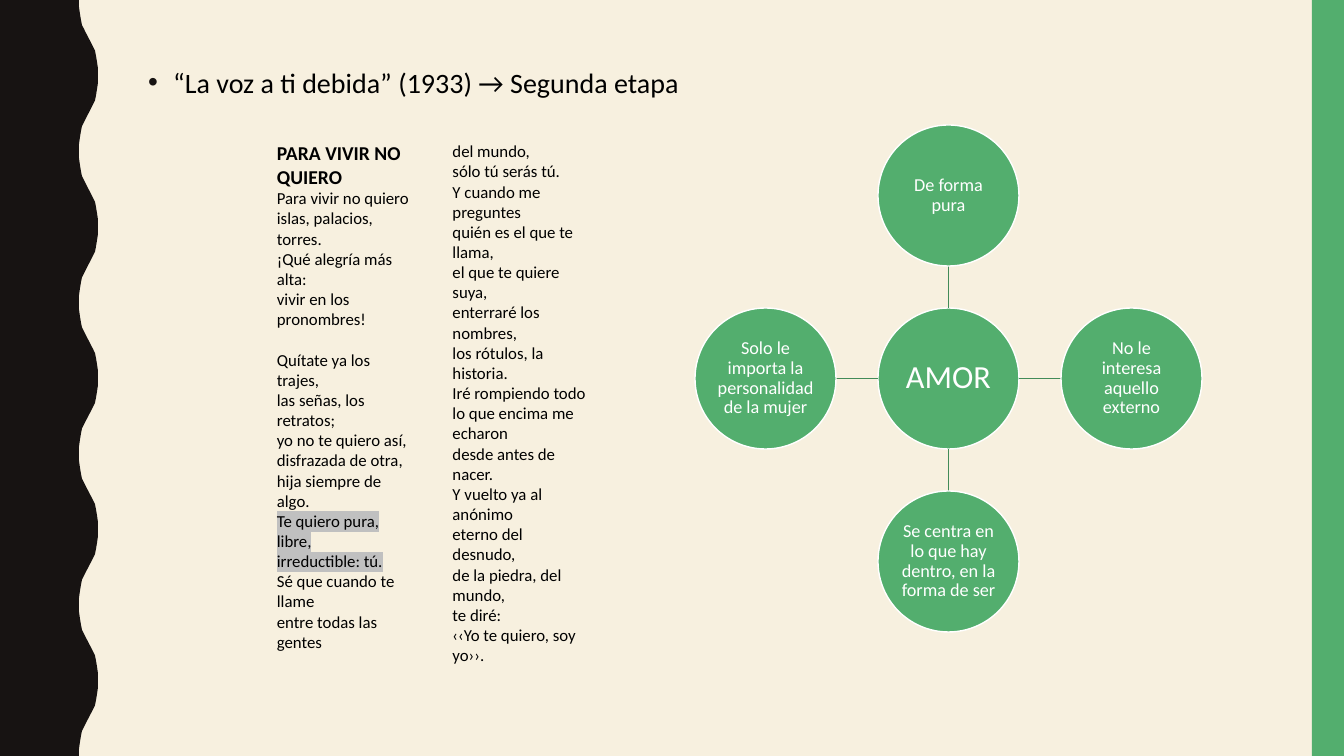
from pptx import Presentation
from pptx import util as u
from pptx.dml import color
from pptx.enum import shapes, text
from pptx.oxml import ns
from lxml import etree

SCALE = 914400 / 100.8  # EMU per px
WIDTH, HEIGHT = 1344, 756
FONT = "Calibri"
CREAM, INK, GREEN, DARK_GREEN = "F7F0DF", "171312", "53AE6E", "428B58"
BLACK, WHITE, GREY = "000000", "FFFFFF", "C0C0C0"

POEM_TITLE = "PARA VIVIR NO QUIERO"
STANZAS = [
    ["Para vivir no quiero", "islas, palacios, torres.", "¡Qué alegría más alta:",
     "vivir en los pronombres!"],
    ["Quítate ya los trajes,", "las señas, los retratos;", "yo no te quiero así,",
     "disfrazada de otra,", "hija siempre de algo.", "Te quiero pura, libre,",
     "irreductible: tú.", "Sé que cuando te llame", "entre todas las gentes",
     "del mundo,", "sólo tú serás tú.", "Y cuando me preguntes",
     "quién es el que te llama,", "el que te quiere suya,", "enterraré los nombres,",
     "los rótulos, la historia.", "Iré rompiendo todo", "lo que encima me echaron",
     "desde antes de nacer.", "Y vuelto ya al anónimo", "eterno del desnudo,",
     "de la piedra, del mundo,", "te diré:", "‹‹Yo te quiero, soy yo››."],
]
HIGHLIGHTED = {"Te quiero pura, libre,", "irreductible: tú."}

# Direction from the hub and wording of each outer circle
IDEAS = [
    (0, -1, "De forma pura"),
    (1, 0, "No le interesa aquello externo"),
    (0, 1, "Se centra en lo que hay dentro, en la forma de ser"),
    (-1, 0, "Solo le importa la personalidad de la mujer"),
]


def px(length):
    return u.Emu(round(length * SCALE))


def rgb(value):
    return color.RGBColor.from_string(value)


def add_child(parent, tag, **attributes):
    return etree.SubElement(parent, ns.qn(tag), attributes)


def paint(shape, fill, line=None):
    shape.shadow.inherit = False
    shape.fill.solid()
    shape.fill.fore_color.rgb = rgb(fill)
    if line:
        shape.line.color.rgb = rgb(line)
        shape.line.width = u.Pt(1)
    else:
        shape.line.fill.background()


def add_run(paragraph, words, size, ink, bold=False, highlight=None):
    run = paragraph.add_run()
    run.text = words
    run.font.size = u.Pt(size)
    run.font.bold = bold
    run.font.name = FONT
    run.font.color.rgb = rgb(ink)
    if highlight:
        properties = run.font.fill and run._r.get_or_add_rPr()
        mark = add_child(properties, "a:highlight")
        add_child(mark, "a:srgbClr", val=highlight)
        properties.find(ns.qn("a:solidFill")).addnext(mark)


def add_wave(slide, left, top, base, depth, height, periods):
    """Dark band whose right edge swings between base and base + depth."""
    half = height / periods / 2
    quarter = [(0, 0), (0, 7), (1, 14), (2, 20), (3, 25), (5, 29), (7, 33)]
    swing = quarter + [(depth - x, half - y) for x, y in reversed(quarter)]
    edge = []
    for index in range(2 * periods):
        for x, y in swing:
            offset = depth - x if index % 2 else x
            edge.append((px(left + base + offset), px(top + index * half + y)))
    builder = slide.shapes.build_freeform(px(left), px(top), scale=1.0)
    builder.add_line_segments(edge + [(px(left), px(top + height))], close=True)
    paint(builder.convert_to_shape(), INK)


def add_side_bar(slide, left, top, width, height):
    bar = slide.shapes.add_shape(
        shapes.MSO_SHAPE.RECTANGLE, px(left), px(top), px(width), px(height))
    paint(bar, GREEN)


def add_heading(slide, left, top, width, height):
    body = slide.placeholders[1]
    body.left, body.top, body.width, body.height = map(px, (left, top, width, height))
    body.text_frame.auto_size = text.MSO_AUTO_SIZE.NONE
    paragraph = body.text_frame.paragraphs[0]
    paragraph.line_spacing = 1.1
    paragraph.space_before = u.Pt(7)
    add_run(paragraph, "“La voz a ti debida” (1933) → Segunda etapa", 20, BLACK)
    # Bullet
    properties = paragraph._p.get_or_add_pPr()
    properties.set("marL", str(px(25)))
    properties.set("indent", str(px(-25)))
    add_child(add_child(properties, "a:buClr"), "a:srgbClr", val=INK)
    add_child(properties, "a:buFont", typeface="Arial")
    add_child(properties, "a:buChar", char="•")


def add_poem(slide, left, top, width, height, gap):
    box = slide.shapes.add_textbox(px(left), px(top), px(width), px(height))
    frame = box.text_frame
    frame.word_wrap = True
    frame.auto_size = text.MSO_AUTO_SIZE.SHAPE_TO_FIT_TEXT
    columns = frame._txBody.bodyPr
    columns.set("numCol", "2")
    columns.set("spcCol", str(px(gap)))
    add_run(frame.paragraphs[0], POEM_TITLE, 14, BLACK, bold=True)
    for number, stanza in enumerate(STANZAS):
        for verse in stanza:
            paragraph = frame.add_paragraph()
            if number and verse == stanza[0]:
                paragraph.space_before = u.Pt(14.4)
            add_run(paragraph, verse, 12, BLACK,
                    highlight=GREY if verse in HIGHLIGHTED else None)


def add_circle(slide, x, y, diameter, words, size):
    """Circle centred on x, y."""
    circle = slide.shapes.add_shape(
        shapes.MSO_SHAPE.OVAL, px(x - diameter / 2), px(y - diameter / 2),
        px(diameter), px(diameter))
    paint(circle, GREEN, WHITE)
    frame = circle.text_frame
    frame.word_wrap = True
    frame.vertical_anchor = text.MSO_ANCHOR.MIDDLE
    frame.margin_left = frame.margin_right = px(1)
    frame.margin_top = frame.margin_bottom = px(1)
    paragraph = frame.paragraphs[0]
    paragraph.alignment = text.PP_ALIGN.CENTER
    paragraph.line_spacing = 0.9
    add_run(paragraph, words, size, WHITE)


def add_spoke(slide, start_x, start_y, end_x, end_y):
    spoke = slide.shapes.add_connector(
        shapes.MSO_CONNECTOR.STRAIGHT, px(start_x), px(start_y), px(end_x), px(end_y))
    spoke.line.color.rgb = rgb(DARK_GREEN)
    spoke.line.width = u.Pt(1)
    add_child(spoke.element.spPr, "a:effectLst")


def add_radial_diagram(slide, left, top, size, diameter):
    """Hub with four circles inside a square box."""
    x, y = left + size / 2, top + size / 2
    radius = diameter / 2
    reach = size / 2 - radius
    add_circle(slide, x, y, diameter, "AMOR", 23)
    for across, down, words in IDEAS:
        add_spoke(slide, x + across * radius, y + down * radius,
                  x + across * (reach - radius), y + down * (reach - radius))
        add_circle(slide, x + across * reach, y + down * reach, diameter, words, 13)


def main():
    presentation = Presentation()
    presentation.slide_width, presentation.slide_height = px(WIDTH), px(HEIGHT)
    slide = presentation.slides.add_slide(presentation.slide_layouts[1])
    title = slide.shapes.title.element
    title.getparent().remove(title)
    slide.background.fill.solid()
    slide.background.fill.fore_color.rgb = rgb(CREAM)

    add_wave(slide, 0, 0, base=79, depth=19, height=HEIGHT, periods=5)
    add_side_bar(slide, 1312, 0, 32, HEIGHT)
    add_heading(slide, 138, 57, 1122, 591)
    add_poem(slide, 267, 136, 332, 539, gap=39)
    add_radial_diagram(slide, 695, 125, 507, diameter=141)
    presentation.save("out.pptx")


if __name__ == "__main__":
    main()
